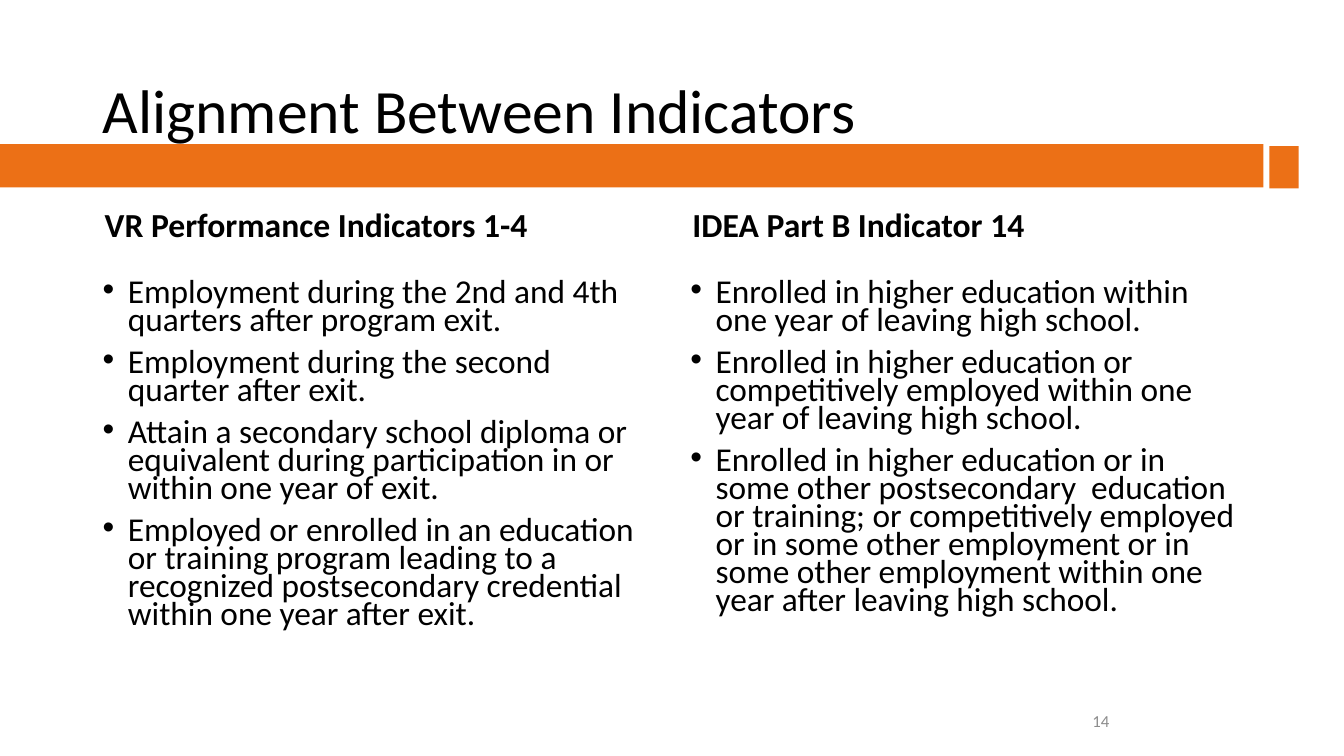
from pptx import Presentation
from pptx.dml.color import RGBColor
from pptx.enum.shapes import MSO_SHAPE
from pptx.enum.text import MSO_ANCHOR as ANCHOR, MSO_AUTO_SIZE as FIT, PP_ALIGN as ALIGN
from pptx.oxml.ns import qn
from pptx.util import Inches, Pt

BLACK = RGBColor(0x00, 0x00, 0x00)
GRAY = RGBColor(0x8C, 0x8C, 0x8C)
ORANGE = RGBColor(0xEC, 0x70, 0x16)

TITLE = dict(size=Pt(44), color=BLACK, line_spacing=0.9, alignment=ALIGN.LEFT)
HEADING = dict(size=Pt(24), color=BLACK, bold=True, line_spacing=0.9)
BULLET = dict(size=Pt(23.8), color=BLACK, line_spacing=0.7)
NUMBER = dict(size=Pt(12), color=GRAY, alignment=ALIGN.CENTER)
PARAGRAPH_KEYS = ("line_spacing", "alignment")

COLUMNS = [
    (0.92, 5.64, "VR Performance Indicators 1-4", [
        "Employment during the 2nd and 4th quarters after program exit.",
        "Employment during the second quarter after exit.",
        "Attain a secondary school diploma or equivalent during participation "
        "in or within one year of exit.",
        "Employed or enrolled in an education or training program leading to a "
        "recognized postsecondary credential within one year after exit.",
    ]),
    (6.75, 5.67, "IDEA Part B Indicator 14", [
        "Enrolled in higher education within one year of leaving high school.",
        "Enrolled in higher education or competitively employed within one "
        "year of leaving high school.",
        "Enrolled in higher education or in some other postsecondary  education "
        "or training; or competitively employed or in some other employment or "
        "in some other employment within one year after leaving high school.",
    ]),
]


def place(shape, left, top, width, height):
    shape.left, shape.top = Inches(left), Inches(top)
    shape.width, shape.height = Inches(width), Inches(height)


def format_paragraph(p, style):
    p.font.name = "Calibri"
    for key, value in style.items():
        if key == "color":
            p.font.color.rgb = value
        else:
            setattr(p if key in PARAGRAPH_KEYS else p.font, key, value)


def set_bullet(p):
    pPr = p._p.get_or_add_pPr()
    pPr.set("marL", str(Inches(0.25)))
    pPr.set("indent", str(-Inches(0.25)))
    font = pPr.makeelement(qn("a:buFont"), {"typeface": "Arial"})
    char = pPr.makeelement(qn("a:buChar"), {"char": "•"})
    pPr.extend([font, char])


def fill_text(shape, lines, style, anchor, bulleted=False):
    tf = shape.text_frame
    tf.word_wrap = True
    tf.auto_size = FIT.NONE
    tf.vertical_anchor = anchor
    for i, line in enumerate(lines):
        p = tf.add_paragraph() if i else tf.paragraphs[0]
        p.add_run().text = line
        if bulleted:
            set_bullet(p)
        if i:
            p.space_before = Pt(10)
        format_paragraph(p, style)


def add_text(s, box, lines, style, anchor, bulleted=False):
    shape = s.shapes.add_textbox(*map(Inches, box))
    fill_text(shape, lines, style, anchor, bulleted)


def add_bar(s, *box):
    bar = s.shapes.add_shape(MSO_SHAPE.RECTANGLE, *map(Inches, box))
    bar.shadow.inherit = False
    bar.fill.solid()
    bar.fill.fore_color.rgb = ORANGE
    bar.line.fill.background()


def main():
    prs = Presentation()
    prs.slide_width, prs.slide_height = Inches(13.33), Inches(7.5)
    s = prs.slides.add_slide(prs.slide_layouts[5])

    title = s.shapes.title
    place(title, 0.92, 0.4, 11.5, 1.45)
    fill_text(title, ["Alignment Between Indicators"], TITLE, ANCHOR.MIDDLE)

    for left, width, heading, bullets in COLUMNS:
        add_text(s, (left + 0.02, 1.58, width, 0.9), [heading], HEADING, ANCHOR.BOTTOM)
        add_text(s, (left, 2.74, width, 4.03), bullets, BULLET, ANCHOR.TOP, bulleted=True)

    add_text(s, (9.42, 6.95, 3, 0.4), ["14"], NUMBER, ANCHOR.MIDDLE)
    add_bar(s, 0, 1.43, 12.53, 0.43)
    add_bar(s, 12.59, 1.45, 0.29, 0.42)
    prs.save("out.pptx")


if __name__ == "__main__":
    main()
